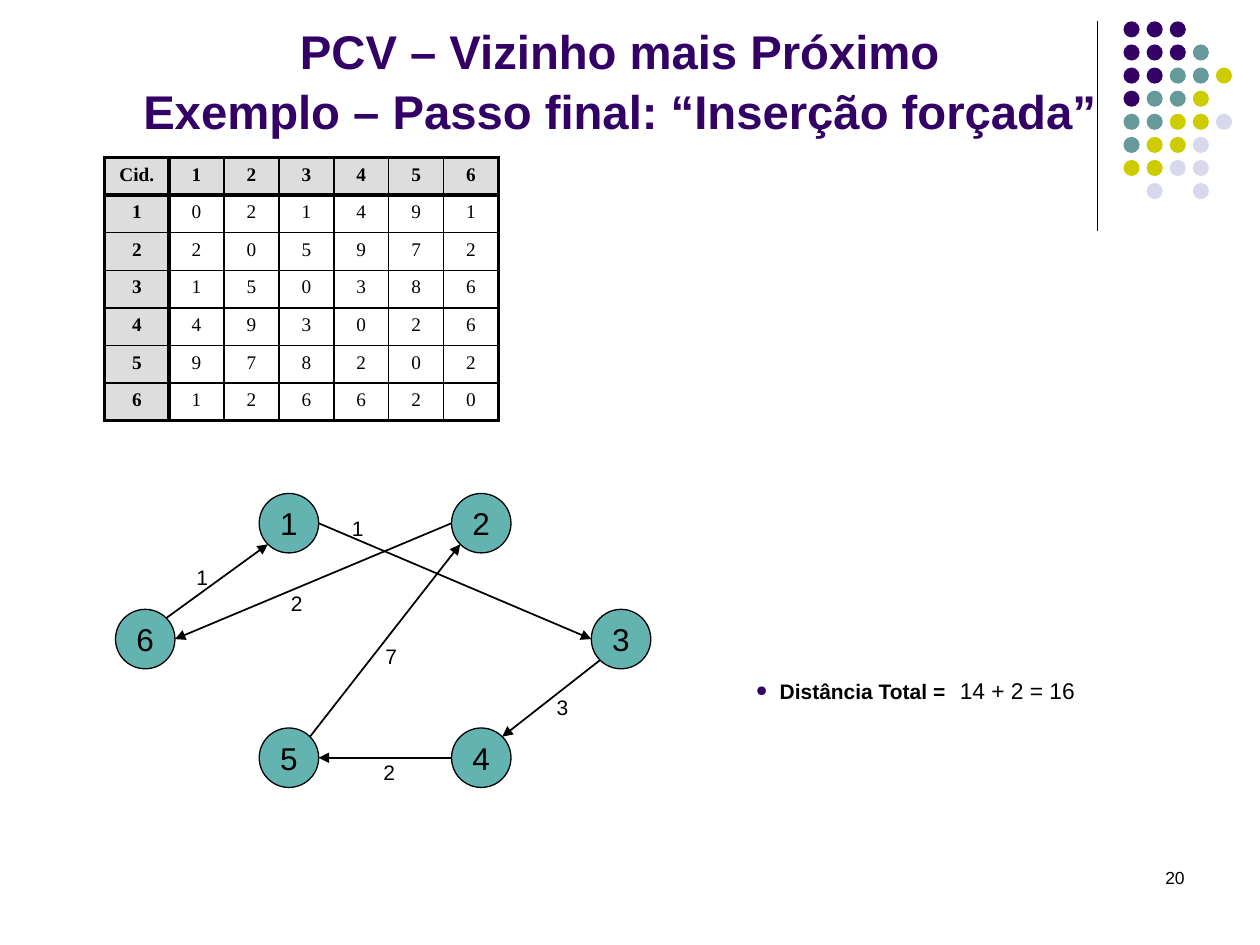
from math import sqrt

from lxml import etree
from pptx import Presentation
from pptx import util as u
from pptx.dml.color import RGBColor
from pptx.enum import shapes, text
from pptx.oxml import ns

Pt = u.Pt
PURPLE, BLACK = "330066", "000000"


def paint(target, color):
    target.solid()
    target.fore_color.rgb = RGBColor.from_string(color)


def write(frame, content, size=12, font="Arial", color=BLACK, bold=False,
          align=text.PP_ALIGN.LEFT, anchor=text.MSO_ANCHOR.TOP, wrap=True, spacing=None):
    frame.word_wrap = wrap
    frame.vertical_anchor = anchor
    paragraph = frame.paragraphs[0]
    paragraph.text = content
    paragraph.alignment = align
    paragraph.line_spacing = spacing
    for run in paragraph.runs:
        run.font.size = Pt(size)
        run.font.name = font
        run.font.bold = bold
        paint(run.font.fill, color)
    return paragraph


prs = Presentation()
prs.slide_width, prs.slide_height = Pt(720), Pt(540)
slide = prs.slides.add_slide(prs.slide_layouts[6])
items = slide.shapes
CENTER = text.PP_ALIGN.CENTER

dot_colors = {"P": PURPLE, "T": "669999", "Y": "CCCC00", "L": "D8D8EC"}
dot_rows = ["PPP", "PPPT", "PPTTY", "PTTY", "TTYYL", "TYYL", "YYLL", " L L"]
for row, pattern in enumerate(dot_rows):
    for col, key in enumerate(pattern):
        if key in dot_colors:
            dot = items.add_shape(shapes.MSO_SHAPE.OVAL, Pt(642 + 13.2 * col),
                                  Pt(12.2 + 13.2 * row), Pt(9.2), Pt(9.2))
            dot.shadow.inherit = False
            paint(dot.fill, dot_colors[key])
            dot.line.fill.background()

title = items.add_textbox(Pt(54), Pt(32.4), Pt(600.5), Pt(50.4))
write(title.text_frame,
      "PCV – Vizinho mais Próximo\vExemplo – Passo final: “Inserção forçada”",
      size=27, color=PURPLE, bold=True, align=CENTER,
      anchor=text.MSO_ANCHOR.BOTTOM, spacing=1.05)

page = items.add_textbox(Pt(516), Pt(492), Pt(168), Pt(36))
write(page.text_frame, "20", size=10, align=text.PP_ALIGN.RIGHT)

distances = [
    [0, 2, 1, 4, 9, 1],
    [2, 0, 5, 9, 7, 2],
    [1, 5, 0, 3, 8, 6],
    [4, 9, 3, 0, 2, 6],
    [9, 7, 8, 2, 0, 2],
    [1, 2, 6, 6, 2, 0],
]
cities = range(1, 7)
matrix = [["Cid.", *cities]] + [[city, *distances[city - 1]] for city in cities]
last = len(cities)
table = items.add_table(7, 7, Pt(59.8), Pt(90), Pt(225.2), Pt(150.5)).table
table.first_row = table.horz_banding = False
for index in range(7):
    table.rows[index].height = Pt(21.5)
    table.columns[index].width = Pt(36.8 if index == 0 else 31.4)
for row, values in enumerate(matrix):
    for col, value in enumerate(values):
        cell = table.cell(row, col)
        header = row == 0 or col == 0
        write(cell.text_frame, str(value), size=11, font="Times New Roman",
              bold=header, align=CENTER)
        thick_edges = {"lnL": col in (0, 1), "lnR": col in (0, last),
                       "lnT": row in (0, 1), "lnB": row in (0, last)}
        properties = cell._tc.get_or_add_tcPr()
        for edge, thick in thick_edges.items():
            border = etree.SubElement(properties, ns.qn(f"a:{edge}"),
                                      w=str(Pt(2.25 if thick else 1)))
            solid = etree.SubElement(border, ns.qn("a:solidFill"))
            etree.SubElement(solid, ns.qn("a:srgbClr"), val=BLACK)
        if header:
            paint(cell.fill, "DDDDDD")
        else:
            cell.fill.background()

RADIUS = 17
city_centers = {1: (165.1, 299), 2: (275, 299), 3: (354.9, 365.2),
                4: (275, 433), 5: (165.1, 433), 6: (83, 365.2)}
for city, (x, y) in city_centers.items():
    node = items.add_shape(shapes.MSO_SHAPE.OVAL, Pt(x - RADIUS), Pt(y - RADIUS),
                           Pt(2 * RADIUS), Pt(2 * RADIUS))
    node.shadow.inherit = False
    paint(node.fill, "63B3B1")
    paint(node.line.fill, BLACK)
    node.line.width = Pt(0.75)
    write(node.text_frame, str(city), size=18, align=CENTER,
          anchor=text.MSO_ANCHOR.MIDDLE, wrap=False)

diagonal = RADIUS / sqrt(2)
sides = {"left": (-RADIUS, 0), "right": (RADIUS, 0),
         "top right": (diagonal, -diagonal), "bottom left": (-diagonal, diagonal)}
tour = [
    (6, "top right", 1, "bottom left", 105.1, 319),
    (1, "right", 3, "left", 193.9, 290.9),
    (3, "bottom left", 4, "top right", 311, 393.1),
    (4, "left", 5, "right", 211.9, 430.6),
    (5, "top right", 2, "bottom left", 213.1, 364.3),
    (2, "left", 6, "right", 159.1, 334.1),
]
lines = [(627, 12.2, 627, 131.8, 0.75, False)]
for start, start_side, end, end_side, label_x, label_y in tour:
    ends = [center + offset for city, side in ((start, start_side), (end, end_side))
            for center, offset in zip(city_centers[city], sides[side])]
    lines.append((*ends, 1, True))
    label = items.add_textbox(Pt(label_x), Pt(label_y), Pt(20.9), Pt(21.6))
    write(label.text_frame, str(distances[start - 1][end - 1]), align=CENTER, wrap=False)

for x1, y1, x2, y2, width, arrow in lines:
    line = items.add_connector(shapes.MSO_CONNECTOR.STRAIGHT, Pt(x1), Pt(y1), Pt(x2), Pt(y2))
    paint(line.line.fill, BLACK)
    line.line.width = Pt(width)
    if arrow:
        etree.SubElement(line.line._get_or_add_ln(), ns.qn("a:tailEnd"), type="triangle")
    etree.SubElement(line._element.spPr, ns.qn("a:effectLst"))

total = items.add_textbox(Pt(424.8), Pt(384.5), Pt(160.6), Pt(33.1))
total_line = write(total.text_frame, "Distância Total =", bold=True)
bullet = total_line._p.get_or_add_pPr()
bullet.set("marL", str(Pt(13.7)))
bullet.set("indent", str(Pt(-13.7)))
bullet_color = etree.SubElement(bullet, ns.qn("a:buClr"))
etree.SubElement(bullet_color, ns.qn("a:srgbClr"), val=PURPLE)
etree.SubElement(bullet, ns.qn("a:buSzPct"), val="70000")
etree.SubElement(bullet, ns.qn("a:buChar"), char="●")

total_sum = items.add_textbox(Pt(541.4), Pt(383), Pt(85), Pt(23))
write(total_sum.text_frame, "14 + 2 = 16", size=13)

prs.save("out.pptx")
